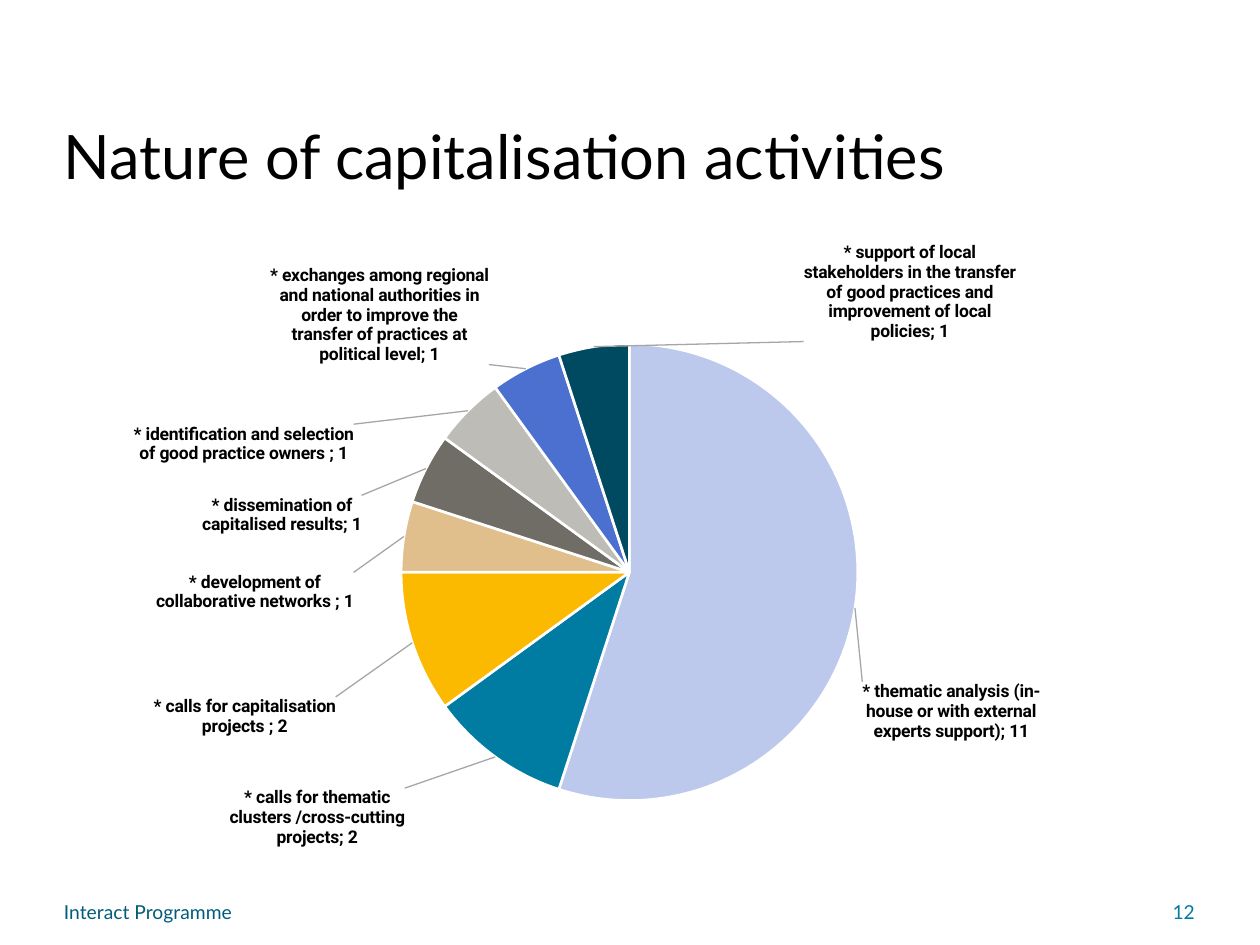
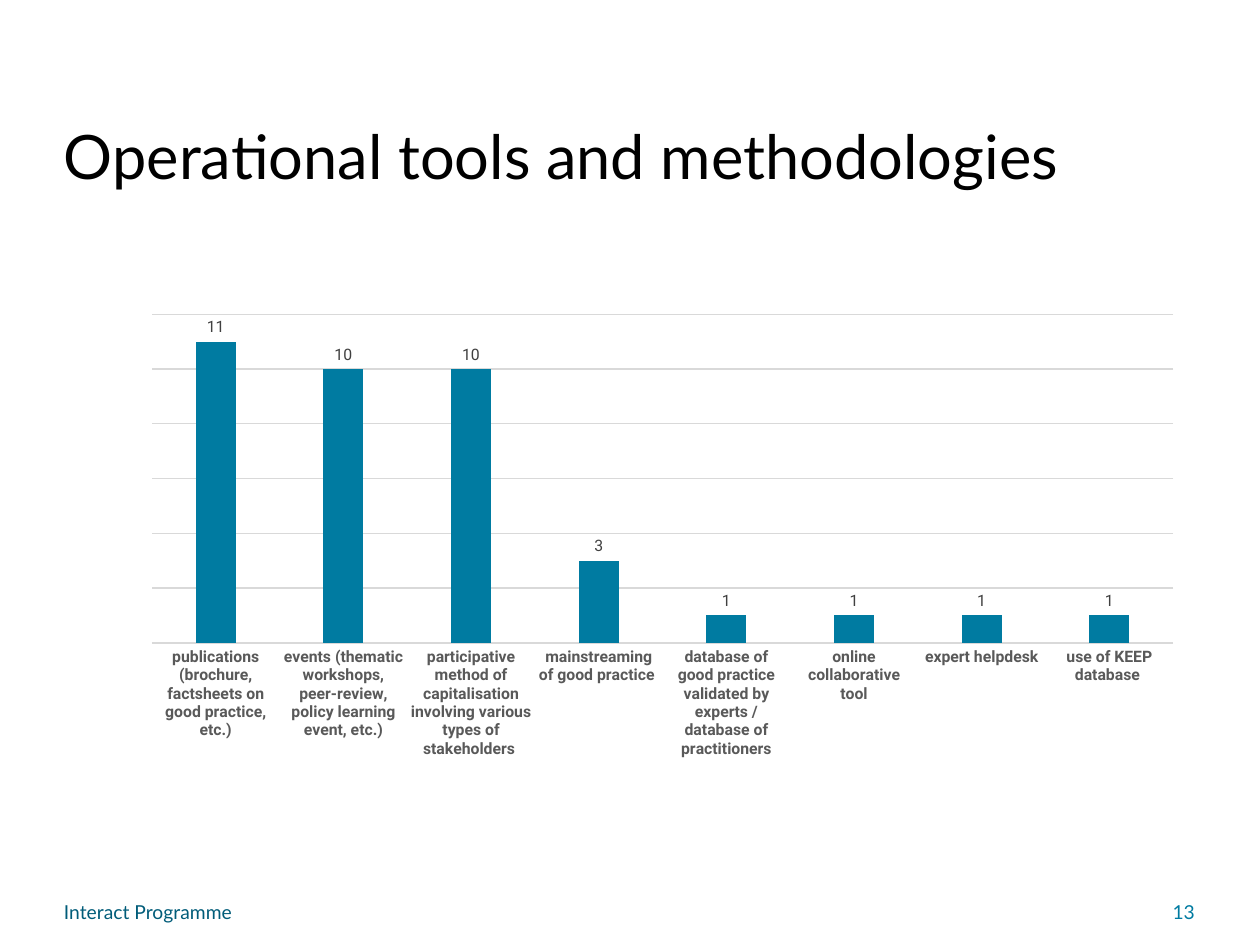
"""Build two slides on capitalisation: a pie of activities and a column chart of tools."""
from copy import deepcopy
from math import cos, radians, sin
from typing import NamedTuple

from pptx import Presentation
from pptx.chart.chart import Chart
from pptx.chart.data import CategoryChartData
from pptx.dml.color import RGBColor
from pptx.enum.chart import XL_CHART_TYPE, XL_LABEL_POSITION, XL_TICK_MARK
from pptx.enum.text import PP_ALIGN
from pptx.oxml import parse_xml
from pptx.oxml.ns import nsdecls, qn
from pptx.slide import Slide
from pptx.util import Pt

PIE, COLUMN = XL_CHART_TYPE.PIE, XL_CHART_TYPE.COLUMN_CLUSTERED
OUTER, NO_TICK = XL_LABEL_POSITION.OUTSIDE_END, XL_TICK_MARK.NONE
LEFT, RIGHT = PP_ALIGN.LEFT, PP_ALIGN.RIGHT

BLACK = RGBColor(0x00, 0x00, 0x00)
WHITE = RGBColor(0xFF, 0xFF, 0xFF)
TEAL = RGBColor(0x00, 0x7B, 0xA1)
DEEP = RGBColor(0x00, 0x5C, 0x79)
NAVY = RGBColor(0x00, 0x4A, 0x61)
PALE = RGBColor(0xBC, 0xC9, 0xED)
GOLD = RGBColor(0xFB, 0xB9, 0x00)
SAND = RGBColor(0xE1, 0xBF, 0x8C)
STONE = RGBColor(0x70, 0x6D, 0x67)
SILVER = RGBColor(0xBD, 0xBC, 0xB6)
BLUE = RGBColor(0x4C, 0x70, 0xCF)
GRID = RGBColor(0xD9, 0xD9, 0xD9)
DARK = RGBColor(0x40, 0x40, 0x40)
GREY = RGBColor(0x59, 0x59, 0x59)
LEADER = RGBColor(0xA6, 0xA6, 0xA6)

SCALE = 914400 / 126
LINE = 20
GAP = 7
HEAD, BODY = "Lato", "Roboto"
C15 = "http://schemas.microsoft.com/office/drawing/2012/chart"


class Box(NamedTuple):
    """A place on the slide, in px."""
    left: int
    top: int
    width: int
    height: int


class Slice(NamedTuple):
    """A pie slice and the place of its label, in px."""
    name: str
    value: int
    color: RGBColor
    left: int
    top: int
    width: int
    lines: int


class Bar(NamedTuple):
    """A column and its value."""
    name: str
    value: int


class Plot(NamedTuple):
    """The inner plot area, as shares of the chart."""
    x: float
    y: float
    w: float
    h: float


TITLE = Box(64, 127, 1131, 67)
FOOTER = Box(64, 900, 864, 24)
NUMBER = Box(928, 900, 267, 24)
PIE_BOX = Box(62, 238, 1102, 662)
BAR_BOX = Box(105, 242, 1090, 651)
PIE_PLOT = Plot(0.24, 0.16, 0.55, 0.69)
BAR_PLOT = Plot(0.043, 0.111, 0.937, 0.505)

SLICES = [
    Slice("* thematic analysis (in-house or with external experts support)",
          11, PALE, 862, 682, 178, 3),
    Slice("* calls for thematic clusters /cross-cutting projects",
          2, TEAL, 230, 788, 175, 3),
    Slice("* calls for capitalisation projects ", 2, GOLD, 153, 697, 183, 2),
    Slice("* development of collaborative networks ",
          1, SAND, 157, 572, 197, 2),
    Slice("* dissemination of capitalised results",
          1, STONE, 203, 495, 159, 2),
    Slice("* identification and selection of good practice owners ",
          1, SILVER, 134, 424, 220, 2),
    Slice("* exchanges among regional and national authorities in order to "
          "improve the transfer of practices at political level",
          1, BLUE, 270, 265, 219, 5),
    Slice("* support of local stakeholders in the transfer of good practices "
          "and improvement of local policies", 1, NAVY, 804, 242, 212, 5),
]
BARS = [
    Bar("publications (brochure, factsheets on good practice, etc.)", 11),
    Bar("events (thematic workshops, peer-review, policy learning event, etc.)", 10),
    Bar("participative method of capitalisation involving various types of "
        "stakeholders ", 10),
    Bar("mainstreaming of good practice ", 3),
    Bar("database of good practice validated by experts / database of "
        "practitioners", 1),
    Bar("online collaborative tool", 1),
    Bar("expert helpdesk", 1),
    Bar("use of KEEP database ", 1),
]


def px(count: float) -> int:
    """Turn px into EMU."""
    return round(count * SCALE)


def place(box: Box) -> list[int]:
    """Give a box in EMU."""
    return [px(side) for side in box]


def style(font, *, size: float, color: RGBColor, face: str = BODY,
          bold: bool = False) -> None:
    """Set the look of a font."""
    font.size, font.name, font.bold = Pt(size), face, bold
    font.color.rgb = color


def write(slide: Slide, box: Box, text: str, *, size: float, color: RGBColor,
          align: PP_ALIGN = LEFT, lead: float = 1.0) -> None:
    """Add a text box without margins."""
    frame = slide.shapes.add_textbox(*place(box)).text_frame
    frame.word_wrap = True
    frame.margin_left = frame.margin_right = 0
    frame.margin_top = frame.margin_bottom = 0
    para = frame.paragraphs[0]
    para.alignment, para.line_spacing = align, lead
    run = para.add_run()
    run.text = text
    style(run.font, size=size, color=color, face=HEAD)


def start(deck, title: str, number: int) -> Slide:
    """Add a slide with its title and footer."""
    slide = deck.slides.add_slide(deck.slide_layouts[6])
    write(slide, TITLE, title, size=35, color=BLACK, lead=0.9)
    write(slide, FOOTER, "Interact Programme", size=11, color=DEEP)
    write(slide, NUMBER, str(number), size=11, color=TEAL, align=RIGHT)
    return slide


def draw(slide: Slide, kind: XL_CHART_TYPE, box: Box, rows: list,
         plot: Plot, bold: bool) -> Chart:
    """Add a chart with a fixed plot area."""
    data = CategoryChartData()
    data.categories = [row.name for row in rows]
    data.add_series("Series 1", [row.value for row in rows])
    chart = slide.shapes.add_chart(kind, *place(box), data).chart
    chart.has_legend = chart.has_title = False
    chart.plots[0].vary_by_categories = kind == PIE
    style(chart.font, size=10, color=BLACK, bold=bold)
    area = chart.element.find(".//" + qn("c:plotArea"))
    for old in area.findall(qn("c:layout")):
        area.remove(old)
    sides = "".join(f'<c:{key} val="{val}"/>'
                    for key, val in plot._asdict().items())
    area.insert(0, parse_xml(
        f'<c:layout {nsdecls("c")}><c:manualLayout>'
        '<c:layoutTarget val="inner"/><c:xMode val="edge"/>'
        f'<c:yMode val="edge"/>{sides}</c:manualLayout></c:layout>'))
    return chart


def shift(part: Slice, angle: float) -> tuple[float, float]:
    """Find how far a label moves from its outer end, as shares of the chart."""
    ray = radians(angle)
    wide, high = PIE_PLOT.w * PIE_BOX.width, PIE_PLOT.h * PIE_BOX.height
    reach = min(wide, high) / 2 + GAP
    left = PIE_BOX.left + PIE_PLOT.x * PIE_BOX.width + wide / 2 + reach * sin(ray)
    top = PIE_BOX.top + PIE_PLOT.y * PIE_BOX.height + high / 2 - reach * cos(ray)
    if sin(ray) < 0:
        left -= part.width
    if cos(ray) > 0:
        top -= part.lines * LINE
    return (part.left - left) / PIE_BOX.width, (part.top - top) / PIE_BOX.height


def label(part: Slice, index: int, angle: float, text):
    """Make the label of one slice."""
    x, y = shift(part, angle)
    wide = (part.width + 4) / PIE_BOX.width
    high = part.lines * LINE / PIE_BOX.height
    item = parse_xml(
        f'<c:dLbl {nsdecls("c")}><c:idx val="{index}"/>'
        f'<c:layout><c:manualLayout><c:x val="{x:.4f}"/><c:y val="{y:.4f}"/>'
        '</c:manualLayout></c:layout><c:dLblPos val="outEnd"/>'
        '<c:showLegendKey val="0"/><c:showVal val="1"/><c:showCatName val="1"/>'
        '<c:showSerName val="0"/><c:showPercent val="0"/>'
        '<c:showBubbleSize val="0"/><c:separator>; </c:separator>'
        '<c:extLst><c:ext uri="{CE6537A1-D6FC-4f65-9D91-7224C49458BB}" '
        f'xmlns:c15="{C15}"><c15:layout><c:manualLayout><c:w val="{wide:.4f}"/>'
        f'<c:h val="{high:.4f}"/></c:manualLayout></c15:layout></c:ext>'
        '</c:extLst></c:dLbl>')
    item.insert(2, deepcopy(text))
    return item


def draw_pie(slide: Slide) -> None:
    """Draw the pie with its labels and leader lines."""
    chart = draw(slide, PIE, PIE_BOX, SLICES, PIE_PLOT, True)
    series = chart.plots[0].series[0]
    tags = series.data_labels
    tags.show_value = tags.show_category_name = True
    tags.position = OUTER
    style(tags.font, size=10, color=BLACK, bold=True)
    group = series._element.find(qn("c:dLbls"))
    text = group.find(qn("c:txPr"))
    text.find(qn("a:bodyPr")).set("wrap", "square")
    for old in group.findall(qn("c:showLeaderLines")):
        group.remove(old)
    turn = 360 / sum(part.value for part in SLICES)
    done = 0
    for index, part in enumerate(SLICES):
        form = series.points[index].format
        form.fill.solid()
        form.fill.fore_color.rgb = part.color
        form.line.color.rgb, form.line.width = WHITE, Pt(1.5)
        angle = (done + part.value / 2) * turn
        group.insert(index, label(part, index, angle, text))
        done += part.value
    for tail in (
            f'<c:separator {nsdecls("c")}>; </c:separator>',
            f'<c:showLeaderLines {nsdecls("c")} val="1"/>',
            f'<c:leaderLines {nsdecls("c", "a")}><c:spPr><a:ln w="9525">'
            f'<a:solidFill><a:srgbClr val="{LEADER}"/></a:solidFill></a:ln>'
            '</c:spPr></c:leaderLines>'):
        group.append(parse_xml(tail))


def draw_bars(slide: Slide) -> None:
    """Draw the columns with their axes and values."""
    chart = draw(slide, COLUMN, BAR_BOX, BARS, BAR_PLOT, False)
    plot = chart.plots[0]
    plot.gap_width, plot.overlap = 219, -27
    series = plot.series[0]
    series.format.fill.solid()
    series.format.fill.fore_color.rgb = TEAL
    tags = series.data_labels
    tags.show_value, tags.position = True, OUTER
    style(tags.font, size=9, color=DARK)
    names, scale = chart.category_axis, chart.value_axis
    names.major_tick_mark = names.minor_tick_mark = NO_TICK
    style(names.tick_labels.font, size=9, color=GREY, bold=True)
    scale.visible = False
    scale.minimum_scale, scale.maximum_scale, scale.major_unit = 0, 12, 2
    scale.has_major_gridlines = True
    for line in (names.format.line, scale.major_gridlines.format.line):
        line.color.rgb, line.width = GRID, Pt(0.75)


def main() -> None:
    """Build and save the deck."""
    deck = Presentation()
    deck.slide_width, deck.slide_height = px(1260), px(945)
    draw_pie(start(deck, "Nature of capitalisation activities", 12))
    draw_bars(start(deck, "Operational tools and methodologies", 13))
    deck.save("out.pptx")


if __name__ == "__main__":
    main()
